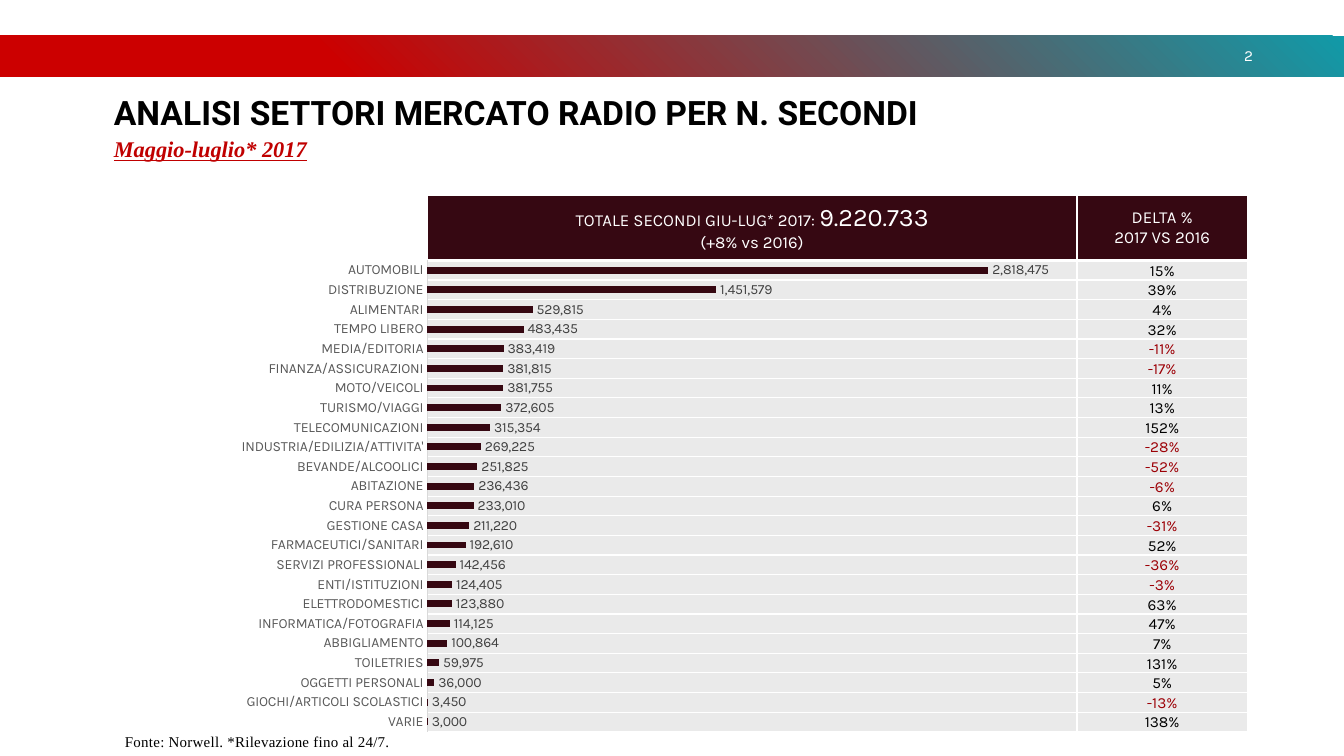
from lxml.etree import SubElement as Sub
from pptx import Presentation
from pptx.chart.data import CategoryChartData as ChartData
from pptx.dml.color import RGBColor
from pptx.enum.chart import XL_CHART_TYPE as Kind, XL_LABEL_POSITION as Pos
from pptx.enum.chart import XL_TICK_MARK as Tick
from pptx.enum.shapes import MSO_SHAPE as Form
from pptx.enum.text import MSO_ANCHOR as Anchor, PP_ALIGN as Align
from pptx.oxml import parse_xml
from pptx.oxml.ns import nsdecls, qn
from pptx.util import Cm, Pt

DARK, PALE, WHITE, BLACK, LOSS = "360812", "EAEAEA", "FFFFFF", "000000", "9C0006"
SECTORS = [
    ("AUTOMOBILI", 2818475, 15),
    ("DISTRIBUZIONE", 1451579, 39),
    ("ALIMENTARI", 529815, 4),
    ("TEMPO LIBERO", 483435, 32),
    ("MEDIA/EDITORIA", 383419, -11),
    ("FINANZA/ASSICURAZIONI", 381815, -17),
    ("MOTO/VEICOLI", 381755, 11),
    ("TURISMO/VIAGGI", 372605, 13),
    ("TELECOMUNICAZIONI", 315354, 152),
    ("INDUSTRIA/EDILIZIA/ATTIVITA'", 269225, -28),
    ("BEVANDE/ALCOOLICI", 251825, -52),
    ("ABITAZIONE", 236436, -6),
    ("CURA PERSONA", 233010, 6),
    ("GESTIONE CASA", 211220, -31),
    ("FARMACEUTICI/SANITARI", 192610, 52),
    ("SERVIZI PROFESSIONALI", 142456, -36),
    ("ENTI/ISTITUZIONI", 124405, -3),
    ("ELETTRODOMESTICI", 123880, 63),
    ("INFORMATICA/FOTOGRAFIA", 114125, 47),
    ("ABBIGLIAMENTO", 100864, 7),
    ("TOILETRIES", 59975, 131),
    ("OGGETTI PERSONALI", 36000, 5),
    ("GIOCHI/ARTICOLI SCOLASTICI", 3450, -13),
    ("VARIE", 3000, 138),
]


def paint(hue):
    return RGBColor.from_string(hue)


def style(font, size, name, hue):
    font.size, font.name = Pt(size), name
    font.color.rgb = paint(hue)


def add_text(slide, box, pad=(0, 0)):
    """Add a wrapping text box; pad is its side and top inset in cm."""
    frame = slide.shapes.add_textbox(*map(Cm, box)).text_frame
    frame.word_wrap = True
    frame.margin_left = frame.margin_right = Cm(pad[0])
    frame.margin_top = frame.margin_bottom = Cm(pad[1])
    return frame


def add_band(slide, box):
    """Draw the gradient band with the page number near its right end."""
    left, top, width, height = box
    band = slide.shapes.add_shape(Form.RECTANGLE, *map(Cm, box))
    band.shadow.inherit = False
    band.line.fill.background()
    props = band._element.spPr
    props.find(qn("a:prstGeom")).addnext(parse_xml(
        f'<a:gradFill {nsdecls("a")} rotWithShape="1"><a:gsLst>'
        '<a:gs pos="25000"><a:srgbClr val="CC0000"/></a:gs>'
        '<a:gs pos="100000"><a:srgbClr val="119AA8"/></a:gs></a:gsLst>'
        '<a:path path="circle"><a:fillToRect t="100000" r="100000"/></a:path>'
        '</a:gradFill>'))
    frame = add_text(slide, (left + width - 7.96, top + 0.13, 5.92, 0.76), (0.25, 0.13))
    para = frame.paragraphs[0]
    para.text, para.alignment = "2", Align.RIGHT
    style(para.font, 11, "Karla", WHITE)


def add_title(slide, box):
    frame = add_text(slide, box)
    head, sub = frame.paragraphs[0], frame.add_paragraph()
    head.text = "ANALISI SETTORI MERCATO RADIO PER N. SECONDI"
    sub.text = "Maggio-luglio* 2017"
    head.line_spacing = sub.line_spacing = 0.9
    sub.space_before = Pt(4)
    style(head.font, 24, "Roboto", BLACK)
    style(sub.font, 16, "Times New Roman", "C00000")
    head.font.bold = sub.font.bold = True
    sub.font.italic = sub.font.underline = True


def dress(cell, fill, pad, base=1):
    """Give a cell white borders, a fill and its side and top insets."""
    props = cell._tc.get_or_add_tcPr()
    for side, width in zip("LRTB", (1, 1, 1, base)):
        line = Sub(props, qn(f"a:ln{side}"), w=str(Pt(width)))
        Sub(Sub(line, qn("a:solidFill")), qn("a:srgbClr"), val=WHITE)
    cell.fill.solid()
    cell.fill.fore_color.rgb = paint(fill)
    cell.margin_left = cell.margin_right = Cm(pad[0])
    cell.margin_top, cell.margin_bottom = Cm(pad[1]), Cm(pad[1])


def add_table(slide, box, head=1.58, delta=4.3):
    """Place the header and one row per sector; delta is the last column's width."""
    left, top, width, height = box
    table = slide.shapes.add_table(len(SECTORS) + 1, 2, *map(Cm, box)).table
    table.first_row = table.horz_banding = False
    table.columns[0].width, table.columns[1].width = Cm(width - delta), Cm(delta)
    for row in table.rows:
        row.height = Cm((height - head) / len(SECTORS))
    table.rows[0].height = Cm(head)

    total, change = table.rows[0].cells
    total.text = "\n(+8% vs 2016)"
    para = total.text_frame.paragraphs[0]
    for text, size in (("TOTALE SECONDI GIU-LUG* 2017: ", 12), ("9.220.733", 18)):
        run = para.add_run()
        run.text = text
        run.font.size = Pt(size)
    change.text = "DELTA %\v2017 VS 2016"
    for cell in (total, change):
        dress(cell, DARK, (0.33, 0.18), 3)
        cell.vertical_anchor = Anchor.MIDDLE
        for para in cell.text_frame.paragraphs:
            para.alignment = Align.CENTER
            style(para.font, 12, "Karla", WHITE)

    for row, (_, _, rate) in enumerate(SECTORS, 1):
        blank, cell = table.cell(row, 0), table.cell(row, 1)
        dress(blank, PALE, (0, 0))
        Sub(blank.text_frame.paragraphs[0]._p, qn("a:endParaRPr"), sz="800")
        dress(cell, PALE, (0.03, 0))
        cell.vertical_anchor = Anchor.BOTTOM
        para = cell.text_frame.paragraphs[0]
        para.text, para.alignment = f"{rate}%", Align.CENTER
        style(para.font, 11, "Karla", LOSS if rate < 0 else BLACK)


def add_note(slide, box):
    frame = add_text(slide, box, (0.25, 0.13))
    frame.vertical_anchor = Anchor.BOTTOM
    para = frame.paragraphs[0]
    para.text = "Fonte: Norwell. *Rilevazione fino al 24/7."
    para.space_before = Pt(3)
    style(para.font, 10.7, "Times New Roman", BLACK)
    para.runs[0]._r.get_or_add_rPr().set("spc", "20")


def add_bars(slide, box):
    data = ChartData(number_format="#,##0")
    data.categories = [name for name, _, _ in SECTORS]
    data.add_series("Secondi", [secs for _, secs, _ in SECTORS])
    chart = slide.shapes.add_chart(Kind.BAR_CLUSTERED, *map(Cm, box), data).chart
    chart.has_legend = chart.has_title = False
    style(chart.font, 10, "Calibri", BLACK)

    names, scale = chart.category_axis, chart.value_axis
    names.reverse_order = True
    names.major_tick_mark = names.minor_tick_mark = Tick.NONE
    style(names.tick_labels.font, 10, "Karla", "595959")
    names.format.line.color.rgb = paint("D9D9D9")
    names.format.line.width = Pt(0.75)
    scale.minimum_scale, scale.maximum_scale = 0, 3000000
    scale.has_major_gridlines = scale.visible = False

    plot = chart.plots[0]
    plot.gap_width, plot.vary_by_categories = 182, False
    fill = plot.series[0].format.fill
    fill.solid()
    fill.fore_color.rgb = paint(DARK)
    plot.has_data_labels = True
    labels = plot.data_labels
    labels.show_value, labels.position = True, Pos.OUTSIDE_END
    labels.number_format, labels.number_format_is_linked = "#,##0", False
    style(labels.font, 10, "Karla", "404040")

    area = chart._chartSpace.chart.plotArea
    for old in area.findall(qn("c:layout")):
        area.remove(old)
    spots = {"layoutTarget": "inner", "xMode": "edge", "yMode": "edge",
             "x": 0.31, "y": 0.037, "w": 0.649, "h": 0.95}
    marks = "".join(f'<c:{key} val="{val}"/>' for key, val in spots.items())
    area.insert(0, parse_xml(f'<c:layout {nsdecls("c")}><c:manualLayout>{marks}'
                             '</c:manualLayout></c:layout>'))


def main():
    deck = Presentation()
    deck.slide_width, deck.slide_height = Cm(33.87), Cm(19.05)
    slide = deck.slides.add_slide(deck.slide_layouts[6])
    add_band(slide, (0, 0.9, 33.87, 1.02))
    add_table(slide, (10.77, 4.93, 20.67, 13.48))
    add_title(slide, (2.87, 2.44, 23.44, 1.7))
    add_note(slide, (2.9, 18.34, 12.27, 0.71))
    add_bars(slide, (3.58, 6.1, 23.19, 12.5))
    deck.save("out.pptx")


if __name__ == "__main__":
    main()
